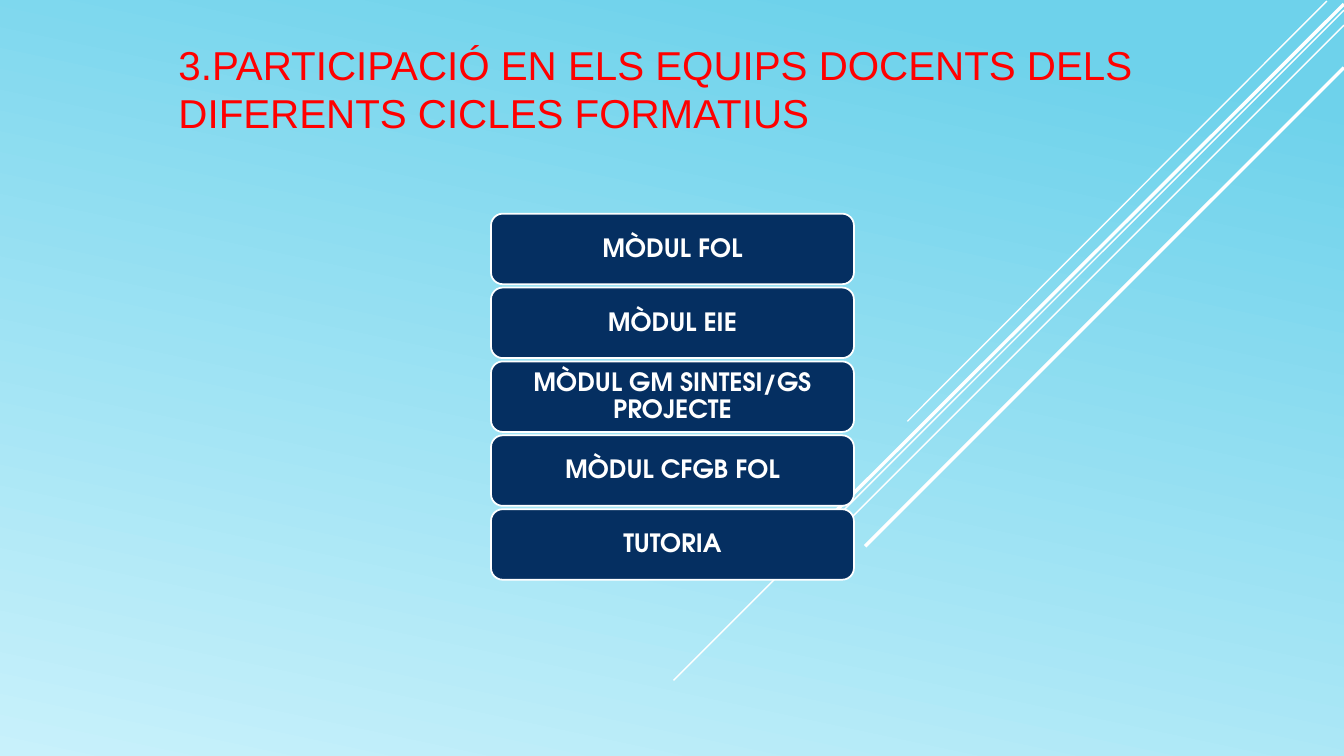
"""Build the slide on taking part in the teaching teams."""
import pptx
import pptx.util
import pptx.dml.color
import pptx.enum.shapes
import pptx.enum.text
import pptx.oxml.ns
import lxml.etree

Inches, Pt = pptx.util.Inches, pptx.util.Pt
TEXT = pptx.enum.text

TITLE = "3.PARTICIPACIÓ EN ELS EQUIPS DOCENTS DELS DIFERENTS CICLES FORMATIUS"
UNITS = ["MÒDUL FOL", "MÒDUL EIE", "MÒDUL GM SINTESI/GS PROJECTE",
         "MÒDUL CFGB FOL", "TUTORIA"]
RAYS = [
    (13.16, 0.01, 9, 4.18, 1),
    (13.33, 0.1, 6.68, 6.75, 1),
    (13.33, 0.25, 7.91, 5.67, 1),
    (13.33, 0.04, 8.02, 5.34, 2.5),
    (13.33, 0.67, 8.58, 5.42, 2.5),
]
SKY = [("6ED2EB", 0.1), ("C8F1FB", 1)]
WHITE, NAVY, RED = "FFFFFF", "052F61", "FF0000"
LEFT, TOP, WIDTH, HEIGHT, STEP = 4.87, 2.12, 3.6, 0.7, 0.733


def paint(color, code):
    color.rgb = pptx.dml.color.RGBColor.from_string(code)


def write(para, text, face, size, code, bold=False):
    run = para.add_run()
    run.text = text
    font = run.font
    font.name, font.size, font.bold = face, Pt(size), bold
    paint(font.color, code)


def fill_sky(slide):
    fill = slide.background.fill
    fill.gradient()
    fill.gradient_angle = 360 - 102
    for stop, (code, place) in zip(fill.gradient_stops, SKY):
        paint(stop.color, code)
        stop.position = place


def add_ray(slide, x1, y1, x2, y2, size):
    ray = slide.shapes.add_connector(
        pptx.enum.shapes.MSO_CONNECTOR.STRAIGHT,
        Inches(x1), Inches(y1), Inches(x2), Inches(y2))
    paint(ray.line.color, WHITE)
    ray.line.width = Pt(size)
    props = ray.element.find(pptx.oxml.ns.qn("p:spPr"))
    lxml.etree.SubElement(props, pptx.oxml.ns.qn("a:effectLst"))


def set_title(slide):
    title = slide.shapes.title
    title.left, title.top = Inches(1.67), Inches(0.36)
    title.width, title.height = Inches(10), Inches(1.05)
    frame = title.text_frame
    frame.word_wrap = True
    frame.auto_size = TEXT.MSO_AUTO_SIZE.NONE
    frame.vertical_anchor = TEXT.MSO_ANCHOR.BOTTOM
    para = frame.paragraphs[0]
    para.alignment = TEXT.PP_ALIGN.LEFT
    write(para, TITLE, "Arial", 28.8, RED)


def add_unit(slide, row, text):
    box = slide.shapes.add_shape(
        pptx.enum.shapes.MSO_SHAPE.ROUNDED_RECTANGLE,
        Inches(LEFT), Inches(TOP + row * STEP), Inches(WIDTH), Inches(HEIGHT))
    box.shadow.inherit = False
    box.fill.solid()
    paint(box.fill.fore_color, NAVY)
    paint(box.line.color, WHITE)
    box.line.width = Pt(1.25)
    frame = box.text_frame
    frame.word_wrap = True
    frame.vertical_anchor = TEXT.MSO_ANCHOR.MIDDLE
    frame.margin_left = frame.margin_right = Inches(0.07)
    frame.margin_top = frame.margin_bottom = Inches(0.04)
    para = frame.paragraphs[0]
    para.alignment = TEXT.PP_ALIGN.CENTER
    para.line_spacing = 0.9
    write(para, text, "TeX Gyre Adventor", 18, WHITE, True)


def main():
    deck = pptx.Presentation()
    deck.slide_width, deck.slide_height = Inches(13.33), Inches(7.5)
    slide = deck.slides.add_slide(deck.slide_layouts[5])
    fill_sky(slide)
    for ray in RAYS:
        add_ray(slide, *ray)
    set_title(slide)
    for row, text in enumerate(UNITS):
        add_unit(slide, row, text)
    deck.save("out.pptx")


if __name__ == "__main__":
    main()
